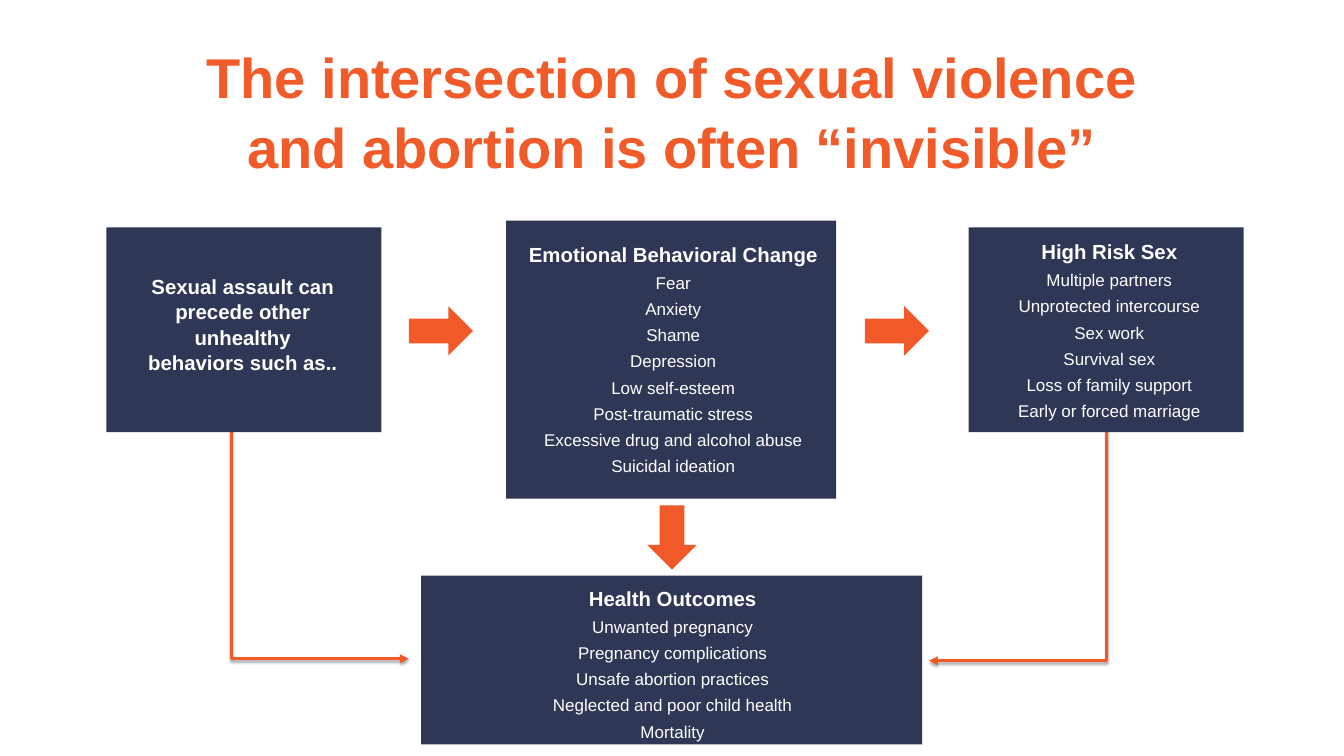
from dataclasses import dataclass
from lxml.etree import SubElement as Sub
from pptx import Presentation
from pptx.dml.color import RGBColor as Color
from pptx.enum.shapes import MSO_CONNECTOR as Link, MSO_SHAPE as Shape
from pptx.enum.text import PP_ALIGN as Align
from pptx.oxml.ns import qn
from pptx.util import Inches, Pt


@dataclass(frozen=True)
class Theme:
    face: str = "Arial"
    navy: Color = Color.from_string("2E3856")
    orange: Color = Color.from_string("F15928")
    title: Color = Color.from_string("F15A29")
    white: Color = Color.from_string("FFFFFF")
    shade: str = "000000"
    huge: int = 66
    head: int = 24
    body: int = 20
    line: float = 3.5
    gap: int = 6
    pitch: float = 1.04


class Deck:
    def __init__(self, theme):
        self.theme = theme
        self.file = Presentation()
        self.file.slide_width = Inches(21.99)
        self.file.slide_height = Inches(12.37)
        self.slide = self.file.slides.add_slide(self.file.slide_layouts[6])

    def form(self, kind, area, fill, turn=0):
        item = self.slide.shapes.add_shape(kind, *map(Inches, area))
        item.shadow.inherit = False
        item.fill.solid()
        item.fill.fore_color.rgb = fill
        item.line.fill.background()
        item.rotation = turn

    def box(self, area):
        self.form(Shape.RECTANGLE, area, self.theme.navy)

    def arrow(self, left, top, turn=0):
        self.form(Shape.RIGHT_ARROW, (left, top, 1.05, 0.81), self.theme.orange, turn)

    def text(self, area, lines, sizes, color, inset=0.05):
        frame = self.slide.shapes.add_textbox(*map(Inches, area)).text_frame
        frame.word_wrap = True
        frame.margin_top = frame.margin_bottom = Inches(inset)
        for i, line in enumerate(lines):
            para = frame.paragraphs[0] if i == 0 else frame.add_paragraph()
            para.text = line
            para.alignment = Align.CENTER
            para.line_spacing = self.theme.pitch
            if i:
                para.space_before = Pt(self.theme.gap)
            font = para.runs[0].font
            style = {"name": self.theme.face, "size": Pt(sizes[min(i, 1)]), "bold": i == 0}
            for key, value in style.items():
                setattr(font, key, value)
            font.color.rgb = color

    def list(self, area, lines):
        self.text(area, lines, (self.theme.head, self.theme.body), self.theme.white)

    def bend(self, start, end):
        (x, y), (to, low) = start, end
        right = to > x
        wide, high = low - y, abs(to - x)
        left, top = (x + to - wide) / 2, (y + low - high) / 2
        ends = (left + wide, left) if right else (left, left + wide)
        item = self.slide.shapes.add_connector(
            Link.ELBOW, *map(Inches, (ends[0], top, ends[1], top + high)))
        item.line.color.rgb = self.theme.orange
        item.line.width = Pt(self.theme.line)
        props = item.element.spPr
        props.find(qn("a:xfrm")).set("rot", str((270 if right else 90) * 60000))
        props.find(qn("a:prstGeom")).set("prst", "bentConnector2")
        Sub(props.find(qn("a:ln")), qn("a:tailEnd"), type="triangle")
        glow = Sub(Sub(props, qn("a:effectLst")), qn("a:outerShdw"),
                   blurRad=str(Pt(3.1)), dist=str(Pt(1.8)), dir="5400000", rotWithShape="0")
        Sub(Sub(glow, qn("a:srgbClr"), val=self.theme.shade), qn("a:alpha"), val="35000")


def main():
    theme = Theme()
    deck = Deck(theme)
    deck.bend((3.79, 6.98), (6.69, 10.78))
    deck.bend((18.1, 7.01), (15.2, 10.81))
    for area in ((6.89, 9.42, 8.2, 2.76), (1.74, 3.72, 4.5, 3.35),
                 (15.85, 3.72, 4.5, 3.35), (8.28, 3.61, 5.4, 4.55)):
        deck.box(area)
    for spot in ((6.69, 5.01), (14.15, 5.01), (10.47, 8.39, 90)):
        deck.arrow(*spot)
    deck.text((2.58, 0.55, 16.83, 3.02),
              ["The intersection of sexual violence and abortion is often “invisible”"],
              (theme.huge,), theme.title, 0.1)
    deck.list((8.39, 3.89, 5.25, 3.87), [
        "Emotional Behavioral Change", "Fear", "Anxiety", "Shame", "Depression",
        "Low self-esteem", "Post-traumatic stress", "Excessive drug and alcohol abuse",
        "Suicidal ideation"])
    deck.list((2.3, 4.42, 3.34, 1.72), [
        "Sexual assault can precede other unhealthy behaviors such as.."])
    deck.list((16.28, 3.85, 3.74, 3.03), [
        "High Risk Sex", "Multiple partners", "Unprotected intercourse", "Sex work",
        "Survival sex", "Loss of family support", "Early or forced marriage"])
    deck.list((7.18, 9.52, 7.65, 2.61), [
        "Health Outcomes", "Unwanted pregnancy", "Pregnancy complications",
        "Unsafe abortion practices", "Neglected and poor child health", "Mortality"])
    deck.file.save("out.pptx")


if __name__ == "__main__":
    main()
